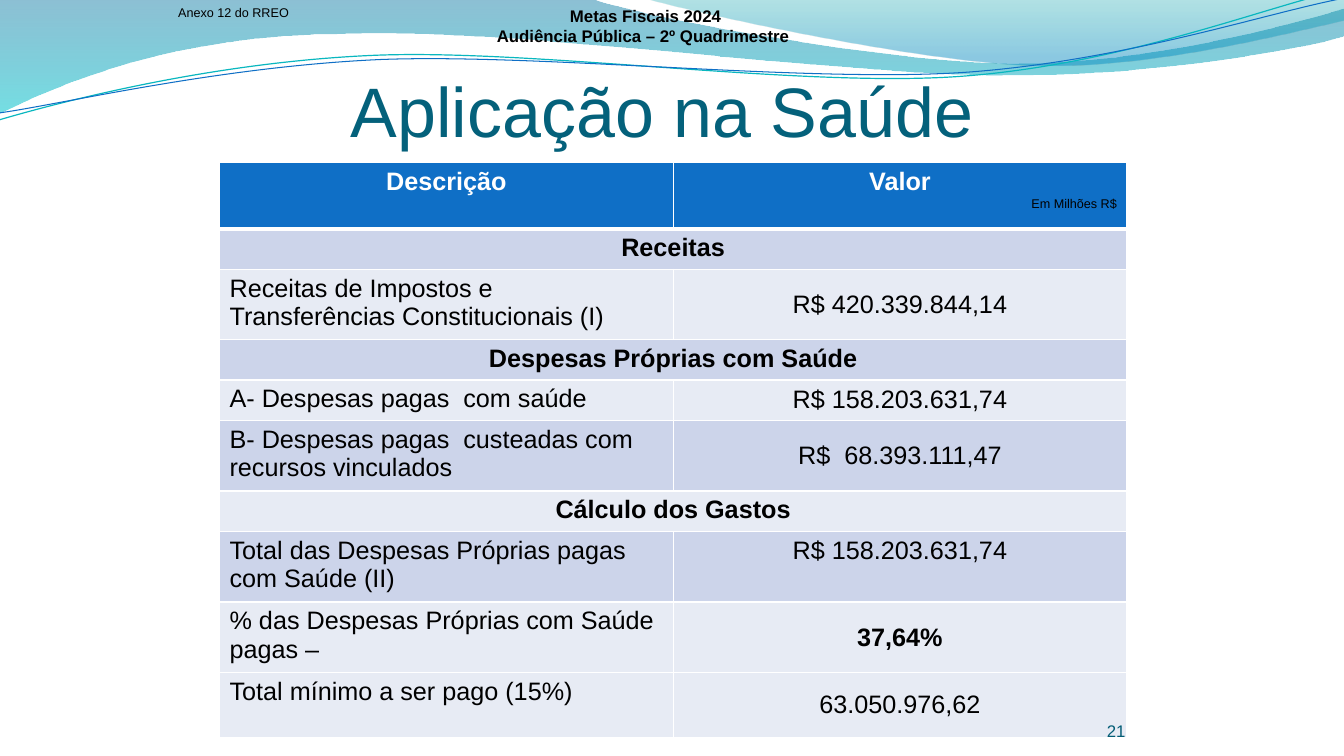
from dataclasses import dataclass
from math import cos, radians, sin
from typing import NamedTuple

from lxml.etree import SubElement
from pptx import Presentation
from pptx.dml.color import RGBColor
from pptx.enum.text import MSO_ANCHOR as Anchor, PP_ALIGN as Align
from pptx.oxml.ns import qn
from pptx.util import Pt


@dataclass(frozen=True)
class Theme:
    font: str = "Arial"
    black: str = "000000"
    white: str = "FFFFFF"
    title: str = "04617B"
    page: str = "035C75"
    header: str = "0F6FC6"
    band_dark: str = "CCD4EA"
    band_light: str = "E7EBF4"
    teal_line: str = "09B7BF"
    title_size: float = 50
    table_size: float = 18
    heading_size: float = 12
    note_size: float = 9
    rule: float = 0.96
    header_rule: float = 3


THEME = Theme()
LINE_TILT = -2.7


class Stop(NamedTuple):
    position: float
    color: str
    opacity: int


@dataclass(frozen=True)
class Wave:
    start: tuple
    segments: tuple
    stops: tuple = ()
    angle: float = 0
    stroke: str = ""
    stroke_width: float = 0
    tilt: float = 0
    pivot: tuple = (0, 0)


@dataclass(frozen=True)
class Label:
    text: str
    box: tuple
    size: float
    color: str = THEME.black
    align: Align = Align.CENTER
    anchor: Anchor = Anchor.TOP
    margins: tuple = (7.2, 3.6, 7.2, 3.6)
    bold: bool = False
    wrap: bool = True


@dataclass(frozen=True)
class Row:
    description: str
    height: float
    value: str = ""
    bold_value: bool = False
    value_anchor: Anchor = Anchor.MIDDLE


WAVES = (
    Wave((0, 0), (
        (422.6, -0.7),
        (456.5, 12.2, 637.2, 45.4, 727.9, 45.4),
        (818.6, 45.4, 920.2, 18.7, 959.8, 6.5),
        (961.2, 25.9),
        (943.9, 31.7, 835.2, 54.7, 715.7, 54),
        (596.9, 54, 366.5, 20.2, 247, 24.5),
        (123.1, 25.2, 43.9, 59.8, -0.7, 81.4),
        (0, 0),
    ), (Stop(0, "0074A0", 45), Stop(1, "00C4CD", 55)), 270),
    Wave((460.1, -0.7), (
        (488.9, 7.9, 654.5, 44.6, 738, 46.8),
        (821.5, 49.7, 923, 23, 959.8, 15.1),
        (959.8, 0),
        (460.1, -0.7),
    ), (Stop(0.2, "008ABF", 45), Stop(1, "00A0A8", 30)), 90),
    Wave((-0.7, 85.7), (
        (46.1, 72, 151.9, 44.6, 265.7, 39.6),
        (379.4, 34.6, 568.8, 62.6, 684, 54.7),
        (799.2, 46.8, 901.4, 5.8, 958.3, -7.2),
    ), stroke=THEME.teal_line, stroke_width=0.85, tilt=LINE_TILT, pivot=(478.8, 41.4)),
    Wave((0, 80.6), (
        (45.4, 74.2, 157, 47.5, 272.2, 42.5),
        (386.6, 38.2, 573.1, 59, 687.6, 51.8),
        (802.8, 43.9, 903.6, 9.4, 960.5, -1.4),
    ), stroke=THEME.header, stroke_width=0.75, tilt=LINE_TILT, pivot=(480.2, 42.5)),
)

TITLE = Label("Aplicação na Saúde ", (156.2, 31.4, 648, 90), THEME.title_size,
              THEME.title, anchor=Anchor.MIDDLE, margins=(0, 3.6, 0, 0))
NOTES = (
    Label("21", (744.1, 500.4, 59.8, 28.8), THEME.heading_size, THEME.page,
          Align.RIGHT, Anchor.BOTTOM, (0, 0, 0, 0)),
    Label("Em Milhões R$", (729.4, 136.1, 75.6, 18), THEME.note_size, wrap=False),
    Label("Anexo 12 do RREO", (120.2, 0, 97.9, 18), THEME.note_size,
          align=Align.LEFT, wrap=False),
    Label("Metas Fiscais 2024\nAudiência Pública – 2º Quadrimestre ",
          (339.1, 0.3, 244.1, 36), THEME.heading_size, anchor=Anchor.MIDDLE, bold=True),
)

ROWS = (
    Row("Descrição", 47.5, "Valor"),
    Row("Receitas", 27.7),
    Row("Receitas de Impostos e Transferências Constitucionais (I)", 47.5,
        "R$ 420.339.844,14"),
    Row("Despesas Próprias com Saúde", 27.7),
    Row("A- Despesas pagas  com saúde", 27.7, "R$ 158.203.631,74"),
    Row("B- Despesas pagas  custeadas com recursos vinculados", 47.5,
        "R$  68.393.111,47"),
    Row("Cálculo dos Gastos", 27.7),
    Row("Total das Despesas Próprias pagas com Saúde (II)", 47.5,
        "R$ 158.203.631,74", value_anchor=Anchor.TOP),
    Row("% das Despesas Próprias com Saúde  pagas –", 47.5, "37,64%", True),
    Row("Total mínimo a ser pago (15%)", 46.1, "63.050.976,62"),
)


def write(frame, text: str, size: float, color: str, align: Align, bold: bool) -> None:
    frame.text = text
    for paragraph in frame.paragraphs:
        paragraph.alignment = align
        for run in paragraph.runs:
            run.font.name = THEME.font
            run.font.size = Pt(size)
            run.font.bold = bold
            run.font.color.rgb = RGBColor.from_string(color)


def level(wave: Wave, x: float, y: float) -> tuple:
    turn = radians(-wave.tilt)
    dx, dy = x - wave.pivot[0], y - wave.pivot[1]
    return (Pt(wave.pivot[0] + dx * cos(turn) - dy * sin(turn)),
            Pt(wave.pivot[1] + dx * sin(turn) + dy * cos(turn)))


def bend(outline, segments: tuple) -> None:
    steps = iter(list(outline.element.iter(qn("a:lnTo"))))
    for segment in segments:
        first = next(steps)
        if len(segment) == 2:
            continue
        first.tag = qn("a:cubicBezTo")
        for _ in range(2):
            step = next(steps)
            first.append(step[0])
            step.getparent().remove(step)


def draw_wave(slide, wave: Wave) -> None:
    points = [level(wave, *pair) for segment in wave.segments
              for pair in zip(segment[::2], segment[1::2])]
    builder = slide.shapes.build_freeform(*level(wave, *wave.start))
    builder.add_line_segments(points, close=bool(wave.stops))
    outline = builder.convert_to_shape()
    bend(outline, wave.segments)
    outline.rotation = wave.tilt
    outline.shadow.inherit = False
    if not wave.stops:
        outline.fill.background()
        outline.line.color.rgb = RGBColor.from_string(wave.stroke)
        outline.line.width = Pt(wave.stroke_width)
        return
    outline.line.fill.background()
    outline.fill.gradient()
    outline.fill.gradient_angle = wave.angle
    for target, stop in zip(outline.fill.gradient_stops, wave.stops):
        target.position = stop.position
        target.color.rgb = RGBColor.from_string(stop.color)
    for color, stop in zip(outline.element.iter(qn("a:srgbClr")), wave.stops):
        SubElement(color, qn("a:alpha"), val=str(stop.opacity * 1000))


def draw_label(slide, label: Label) -> None:
    frame = slide.shapes.add_textbox(*map(Pt, label.box)).text_frame
    frame.word_wrap = label.wrap
    frame.vertical_anchor = label.anchor
    (frame.margin_left, frame.margin_top,
     frame.margin_right, frame.margin_bottom) = map(Pt, label.margins)
    write(frame, label.text, label.size, label.color, label.align, label.bold)


def style_cell(cell, index: int) -> None:
    properties = cell._tc.get_or_add_tcPr()
    thick_side = {0: "B", 1: "T"}.get(index)
    for side in "LRTB":
        width = THEME.header_rule if side == thick_side else THEME.rule
        border = SubElement(properties, qn(f"a:ln{side}"), w=str(Pt(width)))
        SubElement(SubElement(border, qn("a:solidFill")), qn("a:srgbClr"), val=THEME.white)
    dark = index % 2 == 1 and index < len(ROWS) - 1
    band = THEME.band_dark if dark else THEME.band_light
    cell.fill.solid()
    cell.fill.fore_color.rgb = RGBColor.from_string(band if index else THEME.header)


def draw_health_table(slide) -> None:
    table = slide.shapes.add_table(len(ROWS), 2, Pt(156.8), Pt(115.9), Pt(648),
                                   Pt(sum(row.height for row in ROWS))).table
    for index, row in enumerate(ROWS):
        table.rows[index].height = Pt(row.height)
        description, value = table.cell(index, 0), table.cell(index, 1)
        for cell in (description, value):
            style_cell(cell, index)
        heading = index == 0 or not row.value
        color = THEME.black if index else THEME.white
        write(description.text_frame, row.description, THEME.table_size, color,
              Align.CENTER if heading else Align.LEFT, heading)
        if not row.value:
            description.merge(value)
            continue
        value.vertical_anchor = row.value_anchor if index else Anchor.TOP
        write(value.text_frame, row.value, THEME.table_size, color,
              Align.CENTER, heading or row.bold_value)


def main() -> None:
    deck = Presentation()
    deck.slide_width, deck.slide_height = Pt(960), Pt(540)
    slide = deck.slides.add_slide(deck.slide_layouts[6])
    for wave in WAVES:
        draw_wave(slide, wave)
    draw_label(slide, TITLE)
    draw_health_table(slide)
    for note in NOTES:
        draw_label(slide, note)
    deck.save("out.pptx")


if __name__ == "__main__":
    main()
